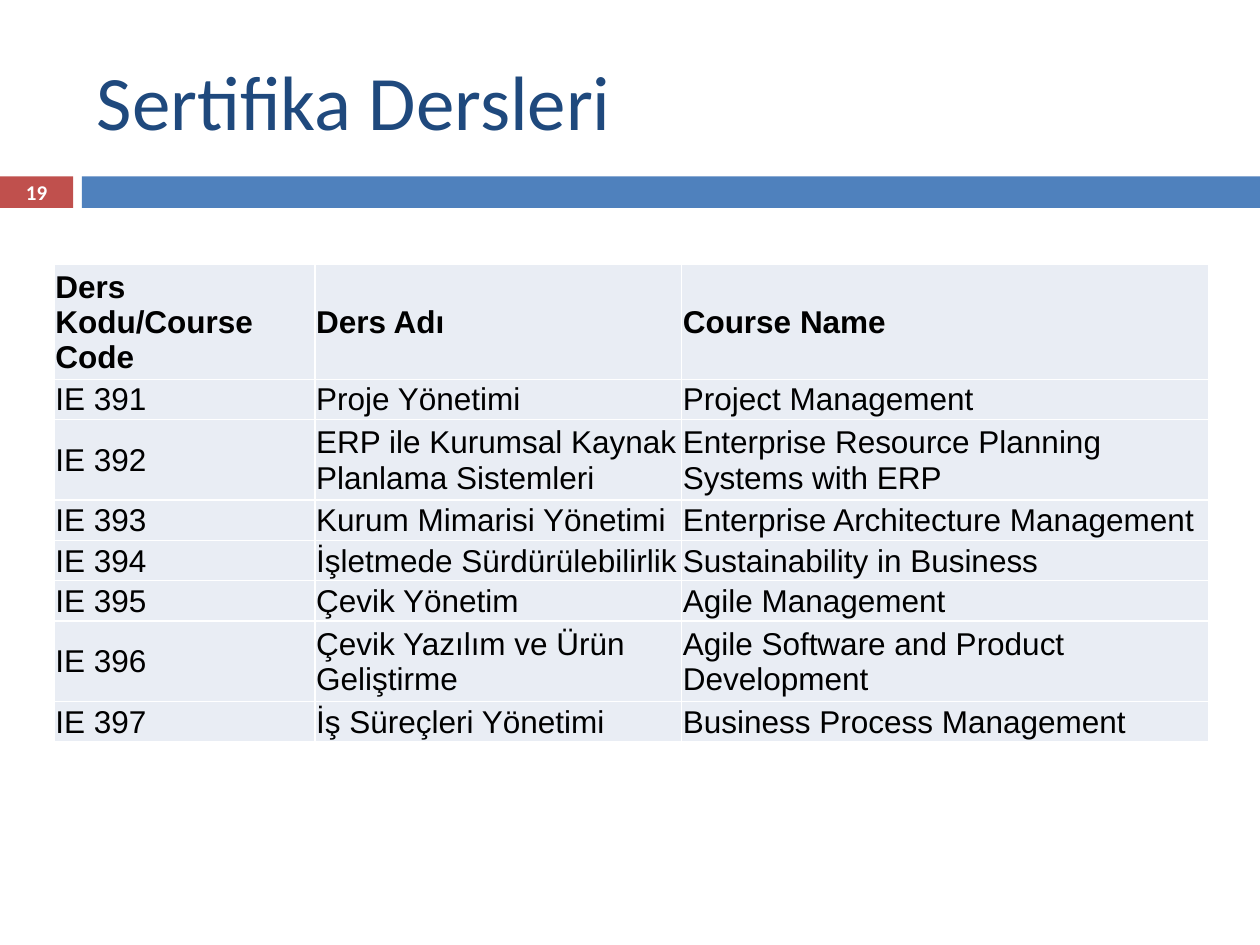
"""Build the certificate courses slide with its bilingual course table."""
from lxml import etree
from pptx import Presentation
from pptx.dml.color import RGBColor
from pptx.enum.shapes import MSO_SHAPE
from pptx.enum.text import MSO_ANCHOR, PP_ALIGN
from pptx.oxml.ns import qn
from pptx.util import Inches, Pt

RECTANGLE = MSO_SHAPE.RECTANGLE
MIDDLE = MSO_ANCHOR.MIDDLE
LEFT, CENTER = PP_ALIGN.LEFT, PP_ALIGN.CENTER

COLORS = {
    "red": "C0504D",
    "blue": "4F81BD",
    "navy": "1F497D",
    "white": "FFFFFF",
    "black": "000000",
    "cell": "E9EDF4",
}
COURSES = [
    ("Ders Kodu/Course Code", "Ders Adı", "Course Name"),
    ("IE 391", "Proje Yönetimi", "Project Management"),
    ("IE 392", "ERP ile Kurumsal Kaynak Planlama Sistemleri",
     "Enterprise Resource Planning Systems with ERP"),
    ("IE 393", "Kurum Mimarisi Yönetimi", "Enterprise Architecture Management"),
    ("IE 394", "İşletmede Sürdürülebilirlik", "Sustainability in Business"),
    ("IE 395", "Çevik Yönetim", "Agile Management"),
    ("IE 396", "Çevik Yazılım ve Ürün Geliştirme",
     "Agile Software and Product Development"),
    ("IE 397", "İş Süreçleri Yönetimi", "Business Process Management"),
]
COLUMN_WIDTHS = [2.07, 2.91, 4.18]
ROW_HEIGHT = 0.32
TALL_ROWS = {0, 2, 6}
CELL_FORMAT = {
    "vertical_anchor": MIDDLE,
    "margin_left": Inches(0.01),
    "margin_right": Inches(0.01),
    "margin_top": Inches(0.01),
    "margin_bottom": 0,
}


def write_text(text_frame, text, color, alignment, font_format):
    paragraph = text_frame.paragraphs[0]
    paragraph.alignment = alignment
    run = paragraph.add_run()
    run.text = text
    run.font.color.rgb = RGBColor.from_string(COLORS[color])
    for name, value in font_format.items():
        setattr(run.font, name, value)


def add_borders(cell, color):
    properties = cell._tc.get_or_add_tcPr()
    for position, side in enumerate(("a:lnL", "a:lnR", "a:lnT", "a:lnB")):
        line = etree.Element(qn(side), w=str(Pt(1)))
        fill = etree.SubElement(line, qn("a:solidFill"))
        etree.SubElement(fill, qn("a:srgbClr"), val=COLORS[color])
        properties.insert(position, line)


presentation = Presentation()
presentation.slide_width = Inches(10)
presentation.slide_height = Inches(7.5)
slide = presentation.slides.add_slide(presentation.slide_layouts[6])

for left, width, color in [(0, 0.58, "red"), (0.65, 9.35, "blue")]:
    bar = slide.shapes.add_shape(
        RECTANGLE, Inches(left), Inches(1.4), Inches(width), Inches(0.25))
    bar.shadow.inherit = False
    bar.fill.solid()
    bar.fill.fore_color.rgb = RGBColor.from_string(COLORS[color])
    bar.line.fill.background()

TEXT_BOXES = [
    ("Sertifika Dersleri", (0.67, 0.25, 8.92, 1.08), "navy", LEFT,
     {"name": "Calibri", "size": Pt(44)}),
    ("19", (0, 1.39, 0.58, 0.27), "white", CENTER,
     {"name": "Calibri", "size": Pt(12), "bold": True}),
]
for text, bounds, color, alignment, font_format in TEXT_BOXES:
    text_box = slide.shapes.add_textbox(*[Inches(length) for length in bounds])
    text_frame = text_box.text_frame
    text_frame.word_wrap = True
    text_frame.vertical_anchor = MIDDLE
    write_text(text_frame, text, color, alignment, font_format)

row_heights = [ROW_HEIGHT * (2 if index in TALL_ROWS else 1)
               for index in range(len(COURSES))]
table = slide.shapes.add_table(
    len(COURSES), len(COLUMN_WIDTHS), Inches(0.43), Inches(2.1),
    Inches(sum(COLUMN_WIDTHS)), Inches(sum(row_heights))).table
for column, width in zip(table.columns, COLUMN_WIDTHS):
    column.width = Inches(width)

for row_index, course in enumerate(COURSES):
    table.rows[row_index].height = Inches(row_heights[row_index])
    font_format = {"name": "Arial", "size": Pt(18), "bold": row_index == 0}
    for column_index, text in enumerate(course):
        cell = table.cell(row_index, column_index)
        for name, value in CELL_FORMAT.items():
            setattr(cell, name, value)
        cell.fill.solid()
        cell.fill.fore_color.rgb = RGBColor.from_string(COLORS["cell"])
        add_borders(cell, "white")
        write_text(cell.text_frame, text, "black", LEFT, font_format)

presentation.save("out.pptx")
